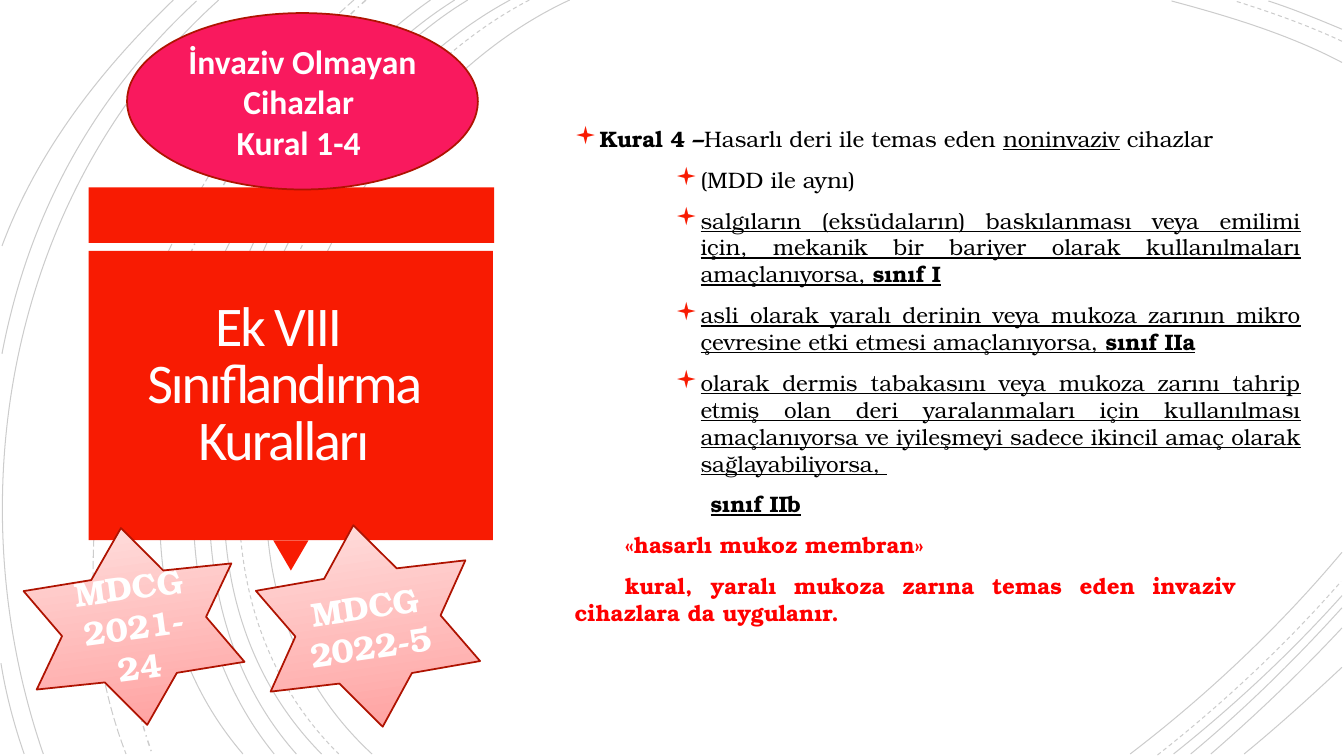
from lxml.etree import SubElement
from pptx import Presentation
from pptx.dml.color import RGBColor
from pptx.enum.dml import MSO_LINE
from pptx.enum.shapes import MSO_SHAPE as SHAPE
from pptx.enum.text import MSO_ANCHOR as ANCHOR, PP_ALIGN as ALIGN
from pptx.oxml.ns import qn
from pptx.util import Pt

PX = 9144  # EMU per px, 100 px to the inch

BLACK = RGBColor(0x00, 0x00, 0x00)
WHITE = RGBColor(0xFF, 0xFF, 0xFF)
TITLE_WHITE = RGBColor(0xFF, 0xFE, 0xFF)
RED = RGBColor(0xFF, 0x00, 0x00)
PANEL_RED = RGBColor(0xF8, 0x1B, 0x02)
OUTLINE_RED = RGBColor(0xAF, 0x13, 0x01)
PINK = RGBColor(0xF9, 0x19, 0x5E)
STAR_DARK = RGBColor(0xFF, 0x9C, 0x9B)
STAR_LIGHT = RGBColor(0xFF, 0xE2, 0xE1)

SANS = "Calibri"
SERIF = "TeX Gyre Bonum"

# Start, two control points and end of each background arc
SOLID_ARCS = [
    ((565, 0), (315, 115), (143, 540), (369, 748)),
    ((1331, 62), (1278, 34), (1218, 16), (1162, 1)),
    ((1121, 748), (1197, 690), (1269, 622), (1331, 548)),
    ((506, 0), (270, 127), (110, 537), (319, 748)),
    ((1331, 29), (1307, 19), (1283, 9), (1258, 1)),
    ((1164, 748), (1223, 701), (1280, 648), (1331, 591)),
    ((464, 0), (244, 133), (110, 541), (294, 748)),
    ((1181, 748), (1234, 704), (1284, 655), (1331, 603)),
    ((451, 0), (231, 138), (97, 533), (272, 748)),
    ((1201, 748), (1246, 709), (1290, 667), (1331, 623)),
    ((427, 0), (217, 147), (53, 529), (241, 748)),
    ((1234, 748), (1267, 721), (1299, 692), (1331, 662)),
    ((217, 0), (11, 185), (-46, 490), (43, 748)),
    ((195, 1), (92, 96), (28, 214), (2, 351)),
    ((1, 658), (6, 689), (14, 719), (24, 748)),
    ((172, 0), (100, 69), (37, 150), (2, 244)),
]
DASHED_ARCS = [
    ((525, 0), (285, 125), (123, 537), (336, 748)),
    ((1331, 41), (1297, 25), (1260, 12), (1225, 1)),
    ((1148, 749), (1213, 698), (1275, 640), (1330, 577)),
]
DASH_DOT_ARC = ((363, 0), (176, 166), (65, 509), (151, 748))
LONG_DASH_ARC = ((351, 0), (157, 169), (29, 499), (125, 748))

# Each rule: left margin and indent in px, colour, runs with b/u marks
RULES = [
    (25, -25, BLACK, [("Kural 4 –", "b"), ("Hasarlı deri ile temas eden ", ""),
                      ("noninvaziv", "u"), (" cihazlar", "")]),
    (125, -25, BLACK, [("(MDD ile aynı)", "")]),
    (125, -25, BLACK, [
        ("salgıların (eksüdaların) baskılanması veya emilimi için, mekanik bir "
         "bariyer olarak kullanılmaları amaçlanıyorsa, ", "u"), ("sınıf I", "bu")]),
    (125, -25, BLACK, [
        ("asli olarak yaralı derinin veya mukoza zarının mikro çevresine etki "
         "etmesi amaçlanıyorsa, ", "u"), ("sınıf IIa", "bu")]),
    (125, -25, BLACK, [
        ("olarak dermis tabakasını veya mukoza zarını tahrip etmiş olan deri "
         "yaralanmaları için kullanılması amaçlanıyorsa ve iyileşmeyi sadece "
         "ikincil amaç olarak sağlayabiliyorsa, ", "u")]),
    (135, 0, BLACK, [("sınıf IIb", "bu")]),
    (0, 0, RED, [("\t«hasarlı mukoz membran»", "b")]),
    (0, 0, RED, [("\tkural, yaralı mukoza zarına temas eden invaziv "
                  "\tcihazlara da uygulanır.", "b")]),
]


def px(*lengths):
    return [length * PX for length in lengths]


def set_font(paragraph, name, size, color, bold=None):
    font = paragraph.font
    font.name, font.size, font.bold = name, Pt(size), bold
    font.color.rgb = color


def add_arc(slide, arc, dash=MSO_LINE.SOLID, width=0.75):
    """Draw one cubic curve as a faint open outline."""
    builder = slide.shapes.build_freeform(*arc[0], scale=PX)
    builder.add_line_segments(arc[1:], close=False)
    shape = builder.convert_to_shape()
    outline = next(shape._element.iter(qn("a:path")))
    curve = SubElement(outline, qn("a:cubicBezTo"))
    for segment in outline.findall(qn("a:lnTo")):
        curve.append(segment[0])
        outline.remove(segment)
    shape.shadow.inherit = False
    shape.fill.background()
    shape.line.color.rgb = BLACK
    shape.line.width = Pt(width)
    shape.line.dash_style = dash
    color = next(shape.line._ln.iter(qn("a:srgbClr")))
    SubElement(color, qn("a:alpha")).set("val", "20000")


def add_figure(slide, kind, box, fill=None, outline=None, rotation=0):
    shape = slide.shapes.add_shape(kind, *px(*box))
    shape.shadow.inherit = False
    shape.rotation = rotation
    if fill:
        shape.fill.solid()
        shape.fill.fore_color.rgb = fill
    if outline:
        shape.line.color.rgb = outline
        shape.line.width = Pt(1.25)
    else:
        shape.line.fill.background()
    return shape


def write_label(shape, lines, font_name):
    frame = shape.text_frame
    frame.word_wrap = True
    frame.vertical_anchor = ANCHOR.MIDDLE
    for index, line in enumerate(lines):
        paragraph = frame.add_paragraph() if index else frame.paragraphs[0]
        paragraph.text = line
        paragraph.alignment = ALIGN.CENTER
        set_font(paragraph, font_name, 24, WHITE, True)


def add_star(slide, box, rotation, text):
    star = add_figure(slide, SHAPE.STAR_6_POINT, box, None, OUTLINE_RED, rotation)
    star.adjustments[0] = 0.3
    star.fill.gradient()
    star.fill.gradient_angle = 90
    for stop, color in zip(star.fill.gradient_stops, (STAR_DARK, STAR_LIGHT)):
        stop.color.rgb = color
    write_label(star, [text], SERIF)


def add_text_frame(slide, box):
    frame = slide.shapes.add_textbox(*px(*box)).text_frame
    frame.word_wrap = True
    frame.vertical_anchor = ANCHOR.MIDDLE
    return frame


def add_title(slide):
    frame = add_text_frame(slide, (90, 249, 383, 269))
    frame.margin_left = frame.margin_right = 25 * PX
    frame.margin_top = frame.margin_bottom = 25 * PX
    paragraph = frame.paragraphs[0]
    paragraph.text = "Ek VIII \vSınıflandırma Kuralları"
    paragraph.alignment = ALIGN.CENTER
    paragraph.line_spacing = 0.85
    set_font(paragraph, SANS, 40, TITLE_WHITE)
    paragraph._p.pPr.find(qn("a:defRPr")).set("spc", "-150")


def add_bullet(properties):
    color = SubElement(properties, qn("a:buClr"))
    SubElement(color, qn("a:srgbClr")).set("val", str(PANEL_RED))
    SubElement(properties, qn("a:buSzPct")).set("val", "110000")
    SubElement(properties, qn("a:buFont")).set("typeface", "Wingdings")
    SubElement(properties, qn("a:buChar")).set("char", "▪")


def add_tab_stops(properties):
    """Set a left tab stop at every inch."""
    stops = SubElement(properties, qn("a:tabLst"))
    for inch in range(1, 8):
        stop = SubElement(stops, qn("a:tab"))
        stop.set("pos", str(inch * 100 * PX))
        stop.set("algn", "l")


def add_rules(slide):
    frame = add_text_frame(slide, (560, 13, 740, 719))
    for index, (margin, indent, color, runs) in enumerate(RULES):
        paragraph = frame.add_paragraph() if index else frame.paragraphs[0]
        paragraph.alignment = ALIGN.JUSTIFY
        paragraph.space_before = Pt(10)
        properties = paragraph._p.get_or_add_pPr()
        properties.set("marL", str(margin * PX))
        properties.set("indent", str(indent * PX))
        if indent:
            add_bullet(properties)
        elif not margin:
            add_tab_stops(properties)
        set_font(paragraph, SERIF, 16, color)
        for text, marks in runs:
            run = paragraph.add_run()
            run.text = text
            run.font.bold = "b" in marks
            run.font.underline = "u" in marks


def main():
    presentation = Presentation()
    presentation.slide_width, presentation.slide_height = px(1333, 750)
    slide = presentation.slides.add_slide(presentation.slide_layouts[6])

    for arc in SOLID_ARCS:
        add_arc(slide, arc)
    for arc in DASHED_ARCS:
        add_arc(slide, arc, MSO_LINE.DASH)
    add_arc(slide, DASH_DOT_ARC, MSO_LINE.DASH_DOT, 1)
    add_arc(slide, LONG_DASH_ARC, MSO_LINE.LONG_DASH)

    add_figure(slide, SHAPE.RECTANGLE, (88, 186, 402, 55), PANEL_RED)
    add_figure(slide, SHAPE.ISOSCELES_TRIANGLE, (271, 536, 35, 30), PANEL_RED, rotation=180)
    add_figure(slide, SHAPE.RECTANGLE, (88, 249, 401, 287), PANEL_RED)
    add_title(slide)
    add_rules(slide)

    ellipse = add_figure(slide, SHAPE.OVAL, (126, 13, 348, 175), PINK, OUTLINE_RED)
    write_label(ellipse, ["İnvaziv Olmayan Cihazlar ", "Kural 1-4 "], SANS)
    add_star(slide, (29, 523, 208, 197), 352.4, "MDCG 2021-24")
    add_star(slide, (260, 520, 210, 202), 351.7, "MDCG 2022-5 ")

    presentation.save("out.pptx")


if __name__ == "__main__":
    main()
